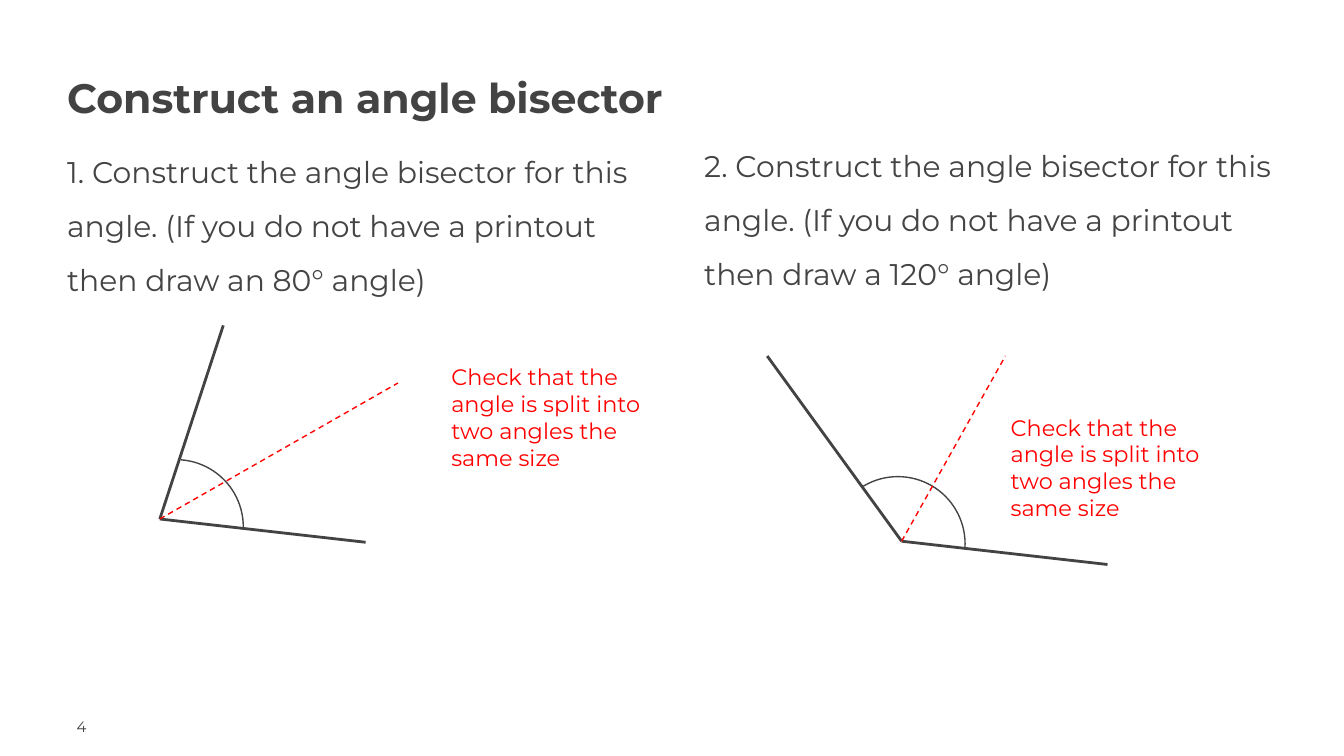
from collections import namedtuple

from lxml import etree
from pptx import Presentation
from pptx import util as u
from pptx.dml.color import RGBColor
from pptx.enum import dml, shapes, text
from pptx.oxml import ns

INK = RGBColor(0x43, 0x43, 0x43)
BODY = RGBColor(0x43, 0x44, 0x43)
RED = RGBColor(0xFF, 0x00, 0x00)
FONT = "Montserrat"
CHECK = "Check that the angle is split into two angles the same size"
LOWER_ARM = (3.89, 0.44)
ARC_SIZE = 2.54

Box = namedtuple("Box", "left top width height")
Angle = namedtuple("Angle", "vertex upper_arm bisector arc_centre arc_ends note")


def add_text(page, box, words, size=16, colour=INK, bold=False, spacing=1.0, inset=(0, 0)):
    frame = page.shapes.add_textbox(*map(u.Cm, box)).text_frame
    frame.word_wrap = True
    frame.vertical_anchor = text.MSO_ANCHOR.TOP
    frame.margin_left = frame.margin_right = u.Cm(inset[0])
    frame.margin_top = frame.margin_bottom = u.Cm(inset[1])
    para = frame.paragraphs[0]
    para.line_spacing = spacing
    span = para.add_run()
    span.text = words
    span.font.name = FONT
    span.font.size = u.Pt(size)
    span.font.bold = bold
    span.font.color.rgb = colour


def add_ray(page, start, vector, colour=INK, width=1.5, dash=None):
    end = (start[0] + vector[0], start[1] + vector[1])
    ray = page.shapes.add_connector(shapes.MSO_CONNECTOR.STRAIGHT, *map(u.Cm, start + end))
    ray.line.color.rgb = colour
    ray.line.width = u.Pt(width)
    if dash is not None:
        ray.line.dash_style = dash
    etree.SubElement(ray._element.spPr, ns.qn("a:effectLst"))


def add_arc(page, centre, ends):
    box = Box(centre[0] - ARC_SIZE / 2, centre[1] - ARC_SIZE / 2, ARC_SIZE, ARC_SIZE)
    arc = page.shapes.add_shape(shapes.MSO_SHAPE.ARC, *map(u.Cm, box))
    arc.shadow.inherit = False
    arc.fill.background()
    arc.line.color.rgb = INK
    arc.line.width = u.Pt(0.75)
    arc.adjustments[0], arc.adjustments[1] = ends


def add_angle(page, box, angle):
    def place(point):
        return (box.left + point[0], box.top + point[1])

    vertex = place(angle.vertex)
    add_ray(page, vertex, angle.upper_arm)
    add_ray(page, vertex, LOWER_ARM)
    add_arc(page, place(angle.arc_centre), angle.arc_ends)
    add_ray(page, vertex, angle.bisector, RED, 0.75, dml.MSO_LINE.DASH)
    add_text(page, Box(*place(angle.note), 4.09, 2.31), CHECK,
             size=12, colour=RED, inset=(0.25, 0.13))


def add_task(page, box, question, angle):
    add_text(page, box, question, colour=BODY, spacing=1.5)
    add_angle(page, box, angle)


def add_header(page, box, title):
    add_text(page, box, title, size=22, bold=True, spacing=1.15)


def add_footer(page, box, number):
    add_text(page, box, number, size=8)


def main():
    deck = Presentation()
    deck.slide_width, deck.slide_height = u.Cm(25.4), u.Cm(14.29)
    page = deck.slides.add_slide(deck.slide_layouts[6])

    add_header(page, Box(1.27, 1.24, 22.43, 1.32), "Construct an angle bisector")
    add_task(
        page, Box(1.27, 2.57, 11.1, 11.0),
        "1. Construct the angle bisector for this angle. "
        "(If you do not have a printout then draw an 80° angle)",
        Angle(vertex=(1.75, 7.24), upper_arm=(1.2, -3.66), bisector=(4.5, -2.57),
              arc_centre=(2.06, 7.39), arc_ends=(164.57, 0), note=(7.01, 4.17)))
    add_task(
        page, Box(13.31, 2.46, 11.1, 9.55),
        "2. Construct the angle bisector for this angle. "
        "(If you do not have a printout then draw a 120° angle)",
        Angle(vertex=(3.73, 7.77), upper_arm=(-2.54, -3.5), bisector=(1.96, -3.5),
              arc_centre=(3.66, 7.82), arc_ends=(142.43, 2.88), note=(5.54, 5.23)))
    add_footer(page, Box(1.45, 13.56, 2.01, 0.51), "4")

    deck.save("out.pptx")


if __name__ == "__main__":
    main()
